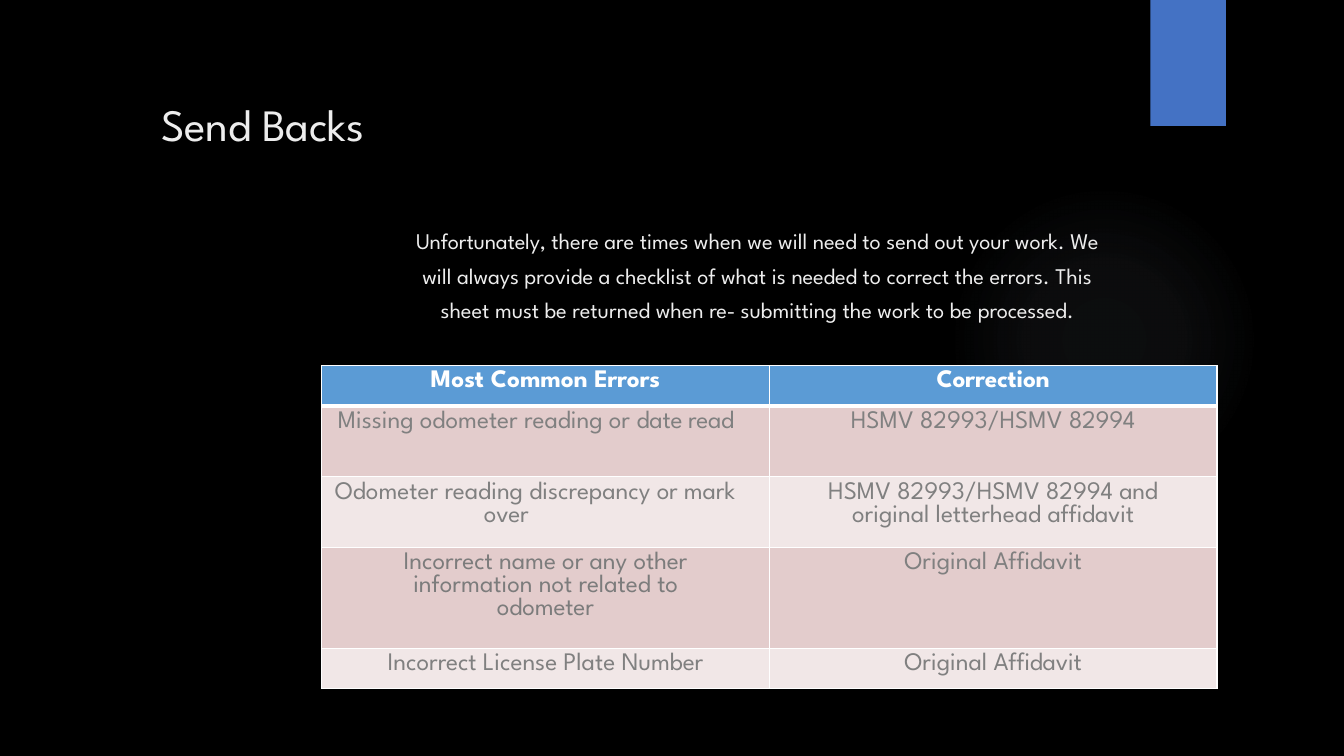
import pptx
import pptx.util
import pptx.enum.shapes
import pptx.enum.text
import pptx.dml.color
import pptx.oxml
import pptx.oxml.ns

Inches = pptx.util.Inches
Pt = pptx.util.Pt
ALIGN = pptx.enum.text.PP_ALIGN
SHAPE = pptx.enum.shapes.MSO_SHAPE
NS = pptx.oxml.ns.nsdecls("a")
FONT = "League Spartan"
COLORS = {
    "background": "000000", "glow": "ADB9CA", "tab": "4472C4",
    "header": "5B9BD5", "odd": "E3CCCC", "even": "F1E7E7",
    "white": "FFFFFF", "light": "EDEDED", "gray": "808080", "dark_gray": "7C7C7C",
}


def rgb(name):
    return pptx.dml.color.RGBColor.from_string(COLORS[name])


def add_runs(paragraph, pieces, size, color, bold=False):
    for text, spacing in pieces:
        run = paragraph.add_run()
        run.text = text
        run.font.name = FONT
        run.font.size = Pt(size)
        run.font.bold = bold
        run.font.color.rgb = rgb(color)
        if spacing:
            run.font._element.set("spc", str(round(spacing * 100)))


prs = pptx.Presentation()
prs.slide_width = Inches(13.33)
prs.slide_height = Inches(7.5)
slide = prs.slides.add_slide(prs.slide_layouts[6])
slide.background.fill.solid()
slide.background.fill.fore_color.rgb = rgb("background")

glow = slide.shapes.add_shape(SHAPE.OVAL, Inches(9.41), Inches(1.83), Inches(3.08), Inches(3.08))
glow.shadow.inherit = False
glow.line.fill.background()
glow.fill.background()
stops = "".join(
    f'<a:gs pos="{position * 1000}"><a:srgbClr val="{COLORS["glow"]}">'
    f'<a:alpha val="{alpha * 1000}"/></a:srgbClr></a:gs>'
    for position, alpha in [(0, 7), (36, 6), (69, 0), (100, 0)]
)
gradient = pptx.oxml.parse_xml(
    f'<a:gradFill {NS}><a:gsLst>{stops}</a:gsLst><a:path path="circle">'
    '<a:fillToRect l="50000" t="50000" r="50000" b="50000"/></a:path></a:gradFill>'
)
glow_properties = glow._element.spPr
glow_properties.replace(glow_properties.find(pptx.oxml.ns.qn("a:noFill")), gradient)

tab = slide.shapes.add_shape(SHAPE.RECTANGLE, Inches(11.41), 0, Inches(0.75), Inches(1.25))
tab.shadow.inherit = False
tab.fill.solid()
tab.fill.fore_color.rgb = rgb("tab")
tab.line.fill.background()

affidavit = [[("Original ", 0), ("Affidavit", -0.1)]]
error_rows = [
    (0.4, 0.04, [[("Most Common ", 0), ("Errors", -0.1)]], [[("Correction", -0.1)]]),
    (0.7, 0.05, [[("Missing odometer reading or ", 0), ("date read", -0.2)]],
     [[("HSMV 82993/HSMV ", 0), ("82994", -0.1)]]),
    (0.7, 0.05,
     [[("Odometer reading discrepancy ", 0), ("or ", -0.2), ("mark ", 0), ("over", -0.2)]],
     [[("HSMV 82993/HSMV 82994 ", 0), ("and", -0.2)],
      [("original letterhead ", 0), ("affidavit", -0.1)]]),
    (1, 0.04,
     [[("Incorrect name or any ", 0), ("other ", -0.1), ("information not related ", 0),
       ("to ", -0.2), ("odometer", -0.1)]], affidavit),
    (0.4, 0.05, [[("Incorrect License Plate ", 0), ("Number", -0.1)]], affidavit),
]
error_indents = {1: (1.93, 0, -1.77), 2: (1.61, 0, -1.48), 3: (0.51, 0.51, 0)}

errors = slide.shapes.add_table(
    len(error_rows), 2, Inches(3.19), Inches(3.63), Inches(8.88), Inches(3.2)
).table
for column in errors.columns:
    column.width = Inches(4.44)

for row, (height, top_inset, *contents) in enumerate(error_rows):
    errors.rows[row].height = Inches(height)
    for col, paragraphs in enumerate(contents):
        cell = errors.cell(row, col)
        cell.margin_left = cell.margin_right = cell.margin_bottom = 0
        cell.margin_top = Inches(top_inset)
        cell.fill.solid()
        cell.fill.fore_color.rgb = rgb("header" if row == 0 else "odd" if row % 2 else "even")
        borders = [("L", 1), ("R", 1), ("T", 3 if row == 1 else 1), ("B", 3 if row == 0 else 1)]
        for index, (side, width) in enumerate(borders):
            cell._tc.get_or_add_tcPr().insert(index, pptx.oxml.parse_xml(
                f'<a:ln{side} {NS} w="{Pt(width)}"><a:solidFill>'
                f'<a:srgbClr val="{COLORS["white"]}"/></a:solidFill></a:ln{side}>'
            ))
        color = "white" if row == 0 else "dark_gray" if (row, col) == (3, 0) else "gray"
        for number, pieces in enumerate(paragraphs):
            frame = cell.text_frame
            paragraph = frame.add_paragraph() if number else frame.paragraphs[0]
            paragraph.alignment = ALIGN.CENTER
            if col == 0 and row in error_indents:
                left, right, first = error_indents[row]
                properties = paragraph._p.get_or_add_pPr()
                properties.set("marL", str(Inches(left)))
                properties.set("marR", str(Inches(right)))
                properties.set("indent", str(Inches(first)))
                if first:
                    paragraph.alignment = ALIGN.LEFT
            add_runs(paragraph, pieces, 18, color, row == 0)

notice = slide.shapes.add_textbox(Inches(4.1), Inches(2.16), Inches(6.82), Inches(1.09)).text_frame
notice.word_wrap = True
notice.margin_left = notice.margin_right = notice.margin_bottom = 0
notice.margin_top = Inches(0.01)
notice.paragraphs[0].alignment = ALIGN.CENTER
notice.paragraphs[0].line_spacing = 1.3
add_runs(notice.paragraphs[0], [
    ("Unfortunately, ", -0.1),
    ("there are times when we will need to send ", 0),
    ("out ", -0.2),
    ("your work. We will always provide a checklist of what is ", 0),
    ("needed ", -0.1),
    ("to correct the errors. This sheet must be returned when", 0),
    (" re- ", -0.2),
    ("submitting the work to be ", 0),
    ("processed.", -0.1),
], 16, "light")

title = slide.shapes.add_textbox(Inches(1.5), Inches(0.75), Inches(2.92), Inches(0.64)).text_frame
title.word_wrap = True
title.paragraphs[0].line_spacing = 1.3
add_runs(title.paragraphs[0], [("Send Backs", -0.1)], 32, "light")

prs.save("out.pptx")
